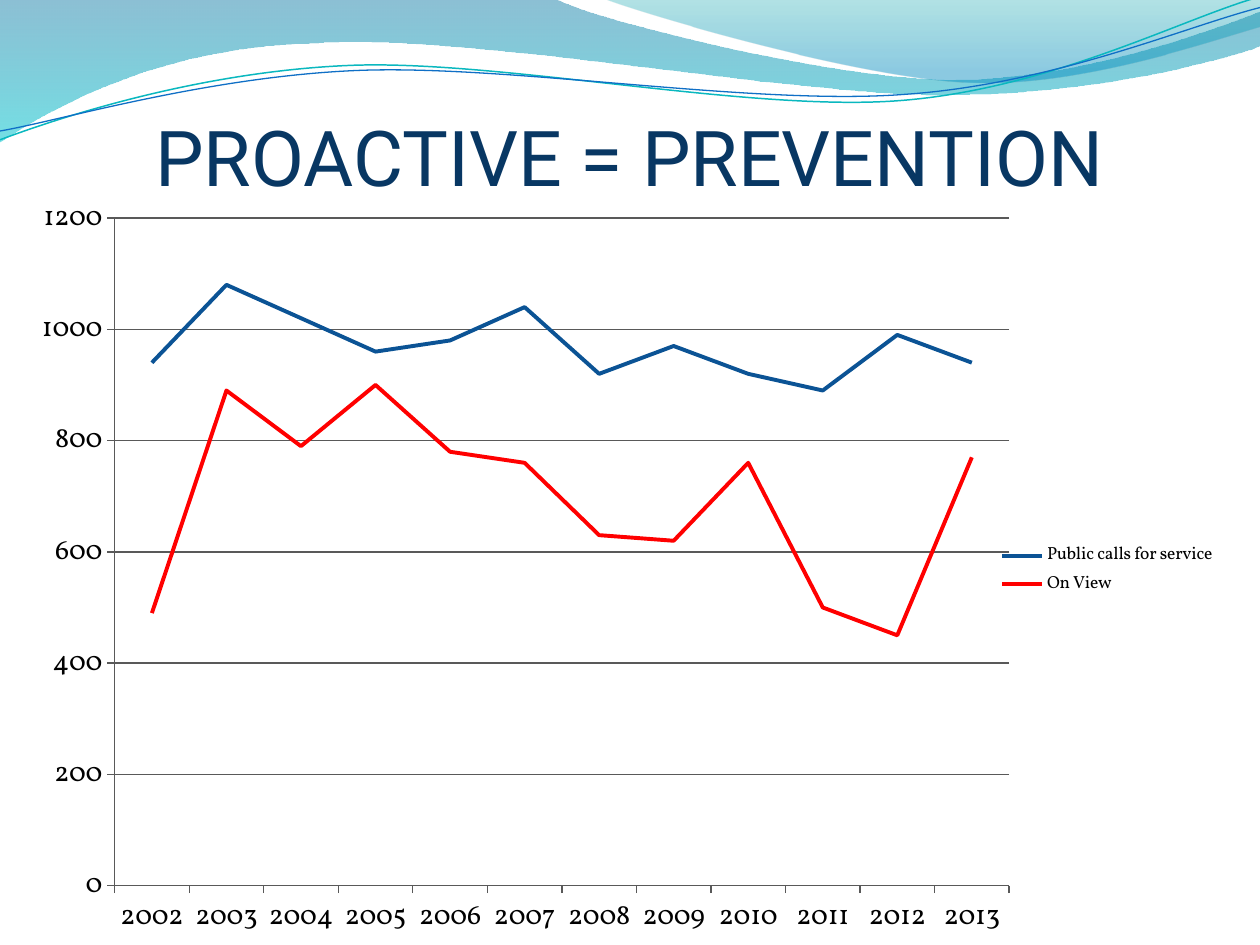
from lxml.etree import SubElement
from pptx import Presentation
from pptx.chart.data import CategoryChartData
from pptx.dml.color import RGBColor
from pptx.enum.chart import XL_CHART_TYPE, XL_LEGEND_POSITION, XL_TICK_MARK
from pptx.enum.text import MSO_ANCHOR, PP_ALIGN
from pptx.oxml import parse_xml
from pptx.oxml.ns import nsdecls, qn
from pptx.util import Inches, Pt

COLS, ROWS = 10, 7.5

BANDS = [
    ([(0, 0), (4.4, -0.01), (4.76, 0.17, 6.64, 0.63, 7.58, 0.63),
      (8.53, 0.63, 9.58, 0.26, 10, 0.09), (10.01, 0.36),
      (9.83, 0.44, 8.7, 0.76, 7.46, 0.75), (6.22, 0.75, 3.82, 0.28, 2.57, 0.34),
      (1.29, 0.36, 0.46, 0.83, -0.01, 1.13), (0, 0)],
     [(0, "0074A1", 45), (100, "00C6CF", 55)]),
    ([(4.79, -0.01), (5.09, 0.11, 6.82, 0.62, 7.69, 0.65),
      (8.56, 0.69, 9.61, 0.32, 10, 0.21), (10, 0), (4.79, -0.01)],
     [(0, "00A1A9", 30), (80, "008BBF", 45)]),
]
RIPPLES = [
    ([(0, 1.11), (0.48, 0.93, 1.58, 0.57, 2.77, 0.52),
      (3.95, 0.47, 5.93, 0.89, 7.13, 0.8), (8.33, 0.71, 9.38, 0.15, 9.98, -0.02)],
     "0AB8BF", 0.85),
    ([(0, 1.04), (0.47, 0.96, 1.64, 0.61, 2.83, 0.56),
      (4.03, 0.51, 5.97, 0.84, 7.17, 0.75), (8.36, 0.67, 9.41, 0.21, 10, 0.06)],
     "0F6FC6", 0.75),
]
YEARS = [str(year) for year in range(2002, 2014)]
SERIES = [
    ("Public calls for service", "0B5395",
     [940, 1080, 1020, 960, 980, 1040, 920, 970, 920, 890, 990, 940]),
    ("On View", "FF0000",
     [490, 890, 790, 900, 780, 760, 630, 620, 760, 500, 450, 770]),
]


def rgb(value):
    return RGBColor.from_string(value)


def format_font(font, size, name, color):
    font.size, font.name = Pt(size), name
    font.color.rgb = rgb(color)


def write(tf, text, size, name, color, align=PP_ALIGN.LEFT):
    p = tf.paragraphs[0]
    p.alignment = align
    r = p.add_run()
    r.text = text
    format_font(r.font, size, name, color)


class Deck:
    title_font, chart_font = "Roboto", "Vollkorn"
    title_color, text_color, axis_color = "083763", "000000", "595959"

    def __init__(self):
        self.prs = Presentation()
        self.prs.slide_width, self.prs.slide_height = Inches(10), Inches(7.5)
        self.s = self.prs.slides.add_slide(self.prs.slide_layouts[5])

    def at(self, col, row):
        return (round(self.prs.slide_width * col / COLS),
                round(self.prs.slide_height * row / ROWS))

    def outline(self, steps, close):
        points = [self.at(*step[i:i + 2])
                  for step in steps for i in range(0, len(step), 2)]
        builder = self.s.shapes.build_freeform(*points[0])
        builder.add_line_segments(points[1:], close=close)
        sp = builder.convert_to_shape()
        sp.shadow.inherit = False
        segments = sp._element.iter(qn("a:lnTo"))
        self.bend(list(segments), steps[1:])
        return sp

    def bend(self, segments, steps):
        remaining = iter(segments)
        for step in steps:
            first = next(remaining)
            if len(step) == 6:
                first.tag = qn("a:cubicBezTo")
                for _ in range(2):
                    extra = next(remaining)
                    first.append(extra[0])
                    extra.getparent().remove(extra)

    def band(self, steps, stops):
        sp = self.outline(steps, True)
        sp.line.fill.background()
        sp.fill.gradient()
        grad = sp._element.spPr.find(qn("a:gradFill"))
        marks = "".join(
            f'<a:gs pos="{pos * 1000}"><a:srgbClr val="{color}">'
            f'<a:alpha val="{alpha * 1000}"/></a:srgbClr></a:gs>'
            for pos, color, alpha in stops)
        grad.getparent().replace(grad, parse_xml(
            f'<a:gradFill {nsdecls("a")} rotWithShape="1"><a:gsLst>{marks}</a:gsLst>'
            '<a:lin ang="5400000" scaled="0"/></a:gradFill>'))

    def ripple(self, steps, color, width):
        sp = self.outline(steps, False)
        sp.fill.background()
        sp.line.color.rgb = rgb(color)
        sp.line.width = Pt(width)

    def title(self, text, col, row, cols, rows):
        sp = self.s.shapes.title
        self.s.shapes._spTree.append(sp._element)
        sp.left, sp.top = self.at(col, row)
        sp.width, sp.height = self.at(cols, rows)
        tf = sp.text_frame
        tf.word_wrap = True
        tf.vertical_anchor = MSO_ANCHOR.BOTTOM
        tf.margin_left = tf.margin_right = tf.margin_bottom = 0
        tf.margin_top = Inches(0.05)
        write(tf, text, 44, self.title_font, self.title_color, PP_ALIGN.CENTER)

    def axis(self, axis):
        axis.major_tick_mark = XL_TICK_MARK.OUTSIDE
        axis.minor_tick_mark = XL_TICK_MARK.NONE
        axis.format.line.color.rgb = rgb(self.axis_color)
        axis.format.line.width = Pt(0.75)
        format_font(axis.tick_labels.font, 16, self.chart_font, self.text_color)

    def line_chart(self, cats, series, plot_area, col, row, cols, rows):
        data = CategoryChartData()
        data.categories = cats
        for name, _, values in series:
            data.add_series(name, values)
        chart = self.s.shapes.add_chart(
            XL_CHART_TYPE.LINE, *self.at(col, row), *self.at(cols, rows), data).chart
        format_font(chart.font, 10, self.chart_font, self.text_color)
        chart.has_title = False
        chart.has_legend = True
        chart.legend.position = XL_LEGEND_POSITION.RIGHT
        chart.legend.include_in_layout = False
        self.axis(chart.category_axis)
        self.axis(chart.value_axis)
        chart.value_axis.minimum_scale = 0
        chart.value_axis.maximum_scale = 1200
        chart.value_axis.major_unit = 200
        grid = chart.value_axis.major_gridlines.format.line
        grid.color.rgb, grid.width = rgb(self.axis_color), Pt(0.75)
        chart.plots[0].vary_by_categories = False
        for line, (_, color, _) in zip(chart.plots[0].series, series):
            line.smooth = False
            line.format.line.color.rgb = rgb(color)
            line.format.line.width = Pt(2.25)
        shares = [part / whole for part, whole in zip(plot_area, (cols, rows) * 2)]
        self.place_plot(chart, shares)

    def place_plot(self, chart, shares):
        area = chart._chartSpace.chart.plotArea
        for old in area.findall(qn("c:layout")):
            area.remove(old)
        layout = SubElement(area, qn("c:layout"))
        area.insert(0, layout)
        manual = SubElement(layout, qn("c:manualLayout"))
        settings = [("layoutTarget", "inner"), ("xMode", "edge"), ("yMode", "edge")]
        for tag, value in settings + list(zip("xywh", shares)):
            SubElement(manual, qn(f"c:{tag}")).set("val", str(value))


def main():
    deck = Deck()
    for steps, stops in BANDS:
        deck.band(steps, stops)
    for steps, color, width in RIPPLES:
        deck.ripple(steps, color, width)
    deck.title("PROACTIVE = PREVENTION", 0.5, 0.75, 9, 0.85)
    deck.line_chart(YEARS, SERIES, (0.66, 0.14, 7.1, 5.31), 0.25, 1.58, 9.5, 5.88)
    deck.prs.save("out.pptx")


if __name__ == "__main__":
    main()
